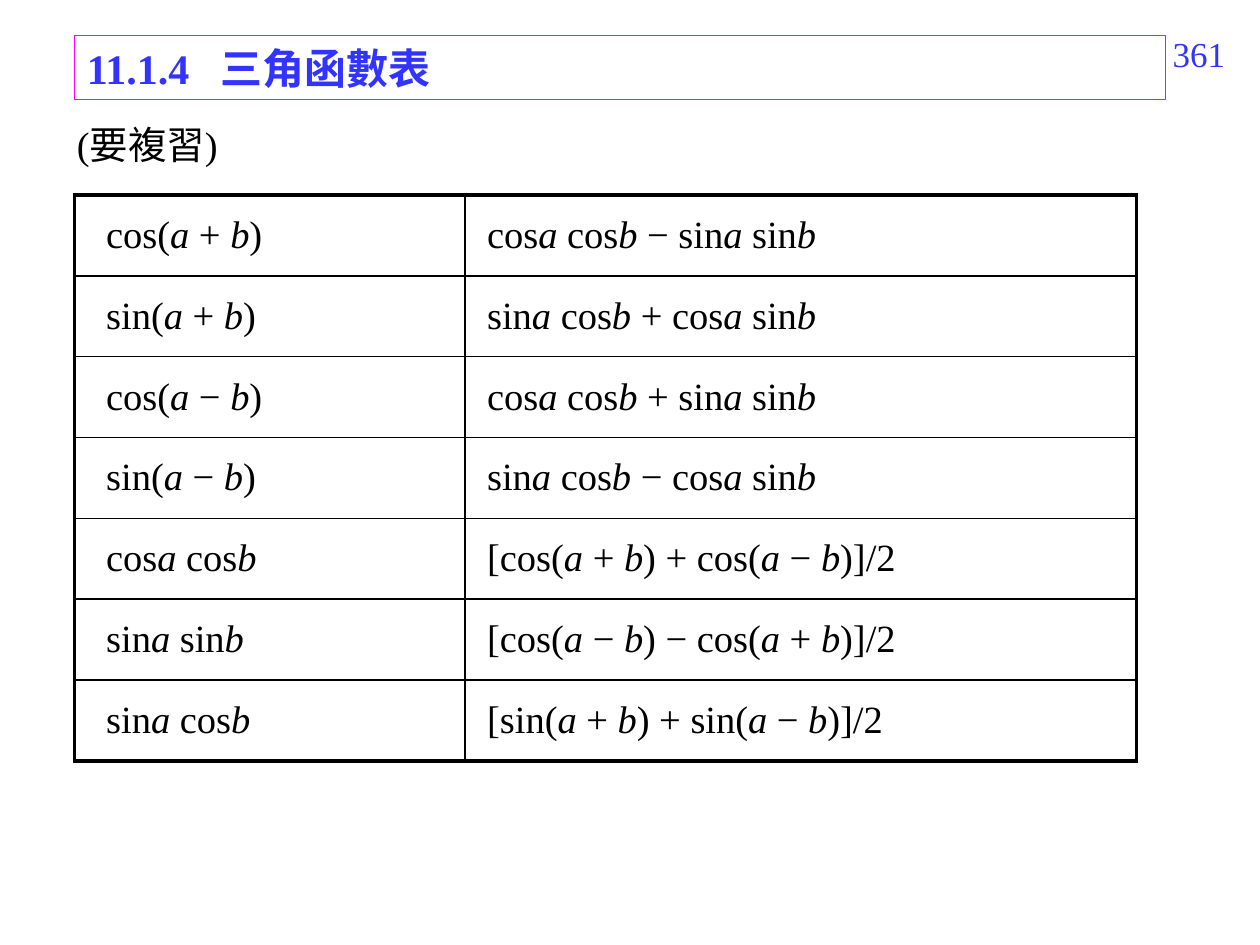
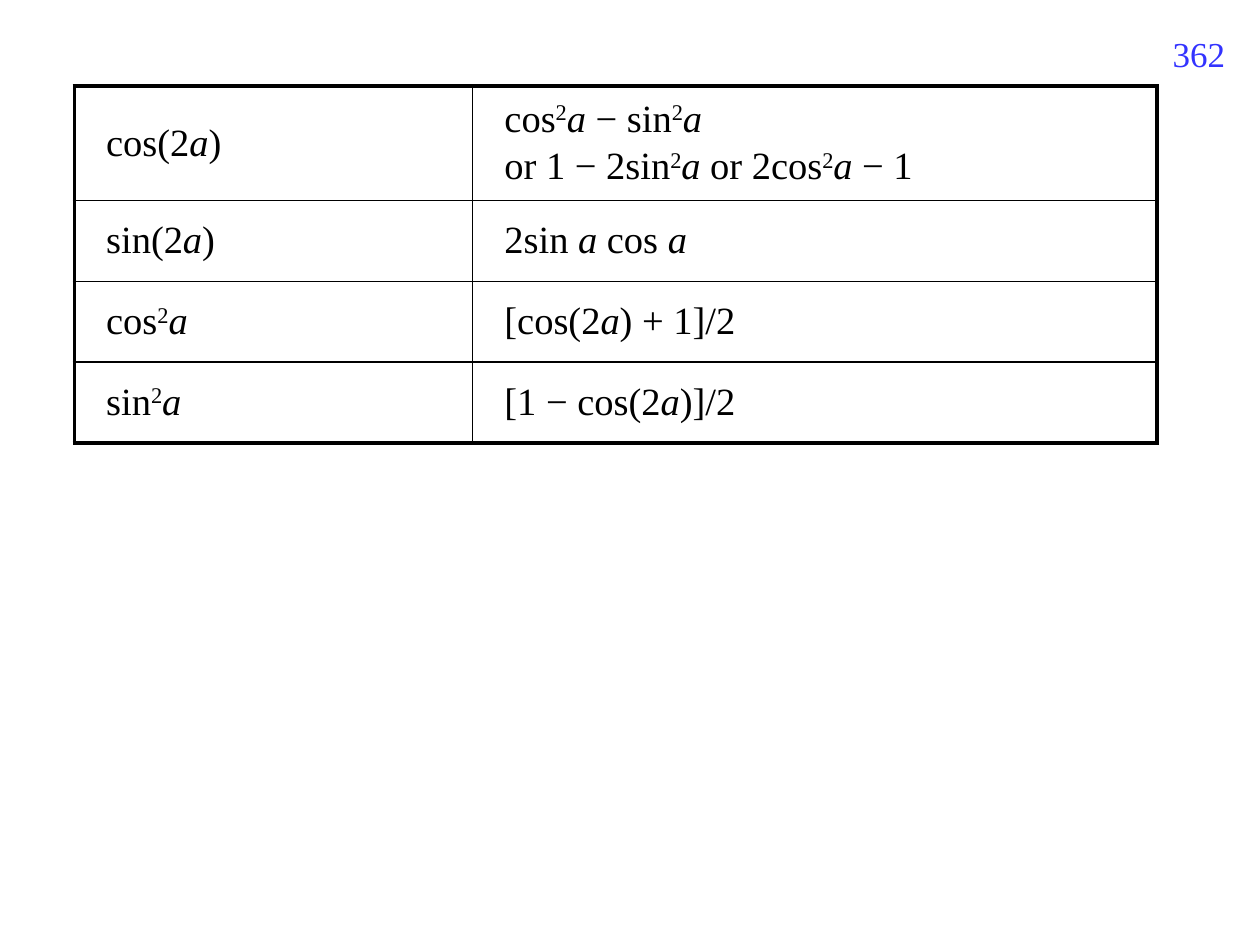
from itertools import groupby

from lxml.etree import SubElement
from pptx import Presentation
from pptx.dml.color import RGBColor
from pptx.enum.shapes import MSO_SHAPE
from pptx.enum.text import MSO_ANCHOR, PP_ALIGN
from pptx.oxml import parse_xml
from pptx.oxml.ns import nsdecls, qn
from pptx.util import Cm, Pt

INK = {"text": "000000", "blue": "3333FF", "frame": "FF00FF"}
FONT = "Times New Roman"
LEFT = 1.5
ROW = 1.63

SUMS = [
    ("cos(a + b)", "cosa cosb − sina sinb"),
    ("sin(a + b)", "sina cosb + cosa sinb"),
    ("cos(a − b)", "cosa cosb + sina sinb"),
    ("sin(a − b)", "sina cosb − cosa sinb"),
    ("cosa cosb", "[cos(a + b) + cos(a − b)]/2"),
    ("sina sinb", "[cos(a − b) − cos(a + b)]/2"),
    ("sina cosb", "[sin(a + b) + sin(a − b)]/2"),
]
TWICE = [
    ("cos(2a)", "cos²a − sin²a\nor 1 − 2sin²a or 2cos²a − 1"),
    ("sin(2a)", "2sin a cos a"),
    ("cos²a", "[cos(2a) + 1]/2"),
    ("sin²a", "[1 − cos(2a)]/2"),
]


class Deck:
    """Hold the shared style and the current slide."""

    def __init__(self):
        self.file = Presentation()
        self.file.slide_width, self.file.slide_height = Cm(25.4), Cm(19.05)

    def page(self, number):
        self.slide = self.file.slides.add_slide(self.file.slide_layouts[6])
        para = self.label(str(number), 22.71, 0.53, 2.24, 1.32, 20, "blue")
        para.alignment = PP_ALIGN.RIGHT

    def style(self, para, size, ink, bold=False):
        font = para.font
        font.name, font.size, font.bold = FONT, Pt(size), bold
        font.color.rgb = RGBColor.from_string(INK[ink])

    def label(self, text, left, top, width, height, size=22, ink="text"):
        box = self.slide.shapes.add_textbox(Cm(left), Cm(top), Cm(width), Cm(height))
        box.text_frame.word_wrap = True
        para = box.text_frame.paragraphs[0]
        para.text = text
        self.style(para, size, ink)
        return para

    def title(self, number, text):
        box = self.slide.shapes.add_shape(
            MSO_SHAPE.RECTANGLE, Cm(LEFT), Cm(0.71), Cm(22), Cm(1.3))
        box.shadow.inherit = False
        box.fill.background()
        box.line.color.rgb = RGBColor.from_string(INK["frame"])
        box.line.width = Pt(0.75)
        para = box.text_frame.paragraphs[0]
        para.text = f"{number}\t{text}"
        para.alignment = PP_ALIGN.LEFT
        self.style(para, 24, "blue", True)
        tabs = parse_xml(f'<a:tabLst {nsdecls("a")}/>')
        SubElement(tabs, qn("a:tab"), pos=str(Cm(2.7)), algn="l")
        para.font._element.addprevious(tabs)

    def math(self, para, text):
        self.style(para, 22, "text")
        para.space_before = Pt(3)
        for kind, part in groupby(text, {"a": "var", "b": "var", "²": "sup"}.get):
            run = para.add_run()
            run.text = "".join(part).replace("²", "2")
            if kind == "var":
                run.font.italic = True
            elif kind == "sup":
                run.font._element.set("baseline", "30000")

    def edge(self, cell, sides):
        props = cell._tc.get_or_add_tcPr()
        for spot, (side, outer) in enumerate(sides.items()):
            width = Pt(2.25 if outer else 1)
            props.insert(spot, parse_xml(
                f'<a:ln{side} {nsdecls("a")} w="{width}"><a:solidFill>'
                f'<a:srgbClr val="{INK["text"]}"/></a:solidFill></a:ln{side}>'))

    def table(self, rows, top, widths, pads, first=ROW):
        tall = [first] + [ROW] * (len(rows) - 1)
        grid = self.slide.shapes.add_table(
            len(rows), len(widths), Cm(LEFT), Cm(top),
            Cm(sum(widths)), Cm(sum(tall))).table
        grid.first_row = grid.horz_banding = False
        for col, width in zip(grid.columns, widths):
            col.width = Cm(width)
        for y, texts in enumerate(rows):
            grid.rows[y].height = Cm(tall[y])
            for x, text in enumerate(texts):
                cell = grid.cell(y, x)
                cell.fill.background()
                cell.vertical_anchor = MSO_ANCHOR.MIDDLE
                cell.margin_left = Cm(pads[x])
                frame = cell.text_frame
                for n, line in enumerate(text.split("\n")):
                    para = frame.add_paragraph() if n else frame.paragraphs[0]
                    self.math(para, line)
                self.edge(cell, {"L": x == 0, "R": x == len(widths) - 1,
                                 "T": y == 0, "B": y == len(rows) - 1})


def main():
    deck = Deck()
    deck.page(361)
    deck.title("11.1.4", "三角函數表")
    deck.table(SUMS, 3.93, (7.87, 13.54), (0.64, 0.45))
    deck.label("(要複習)", 1.3, 2.31, 5.8, 1.2)
    deck.page(362)
    deck.table(TWICE, 1.73, (8.03, 13.79), (0.64, 0.64), 2.31)
    deck.file.save("out.pptx")


if __name__ == "__main__":
    main()
